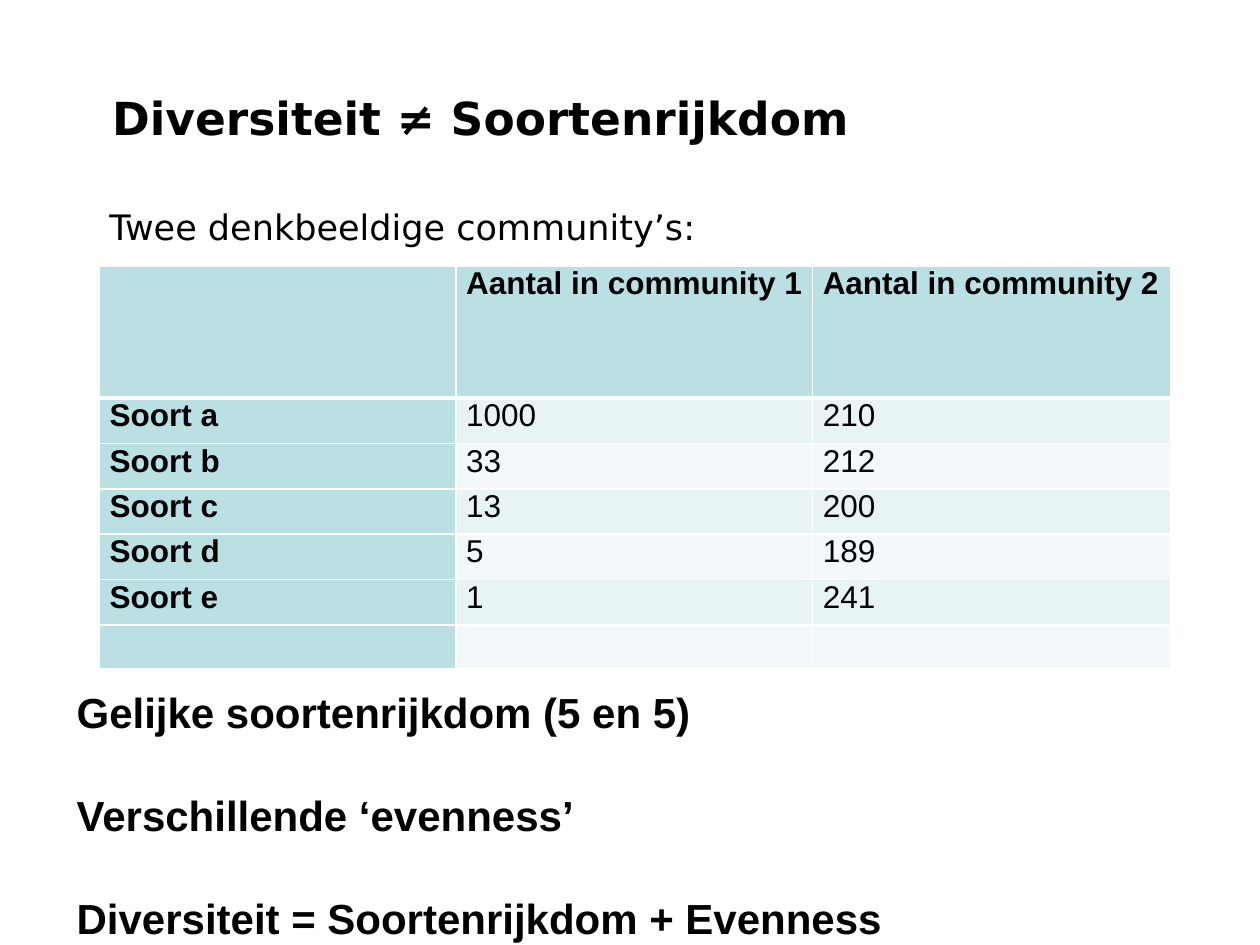
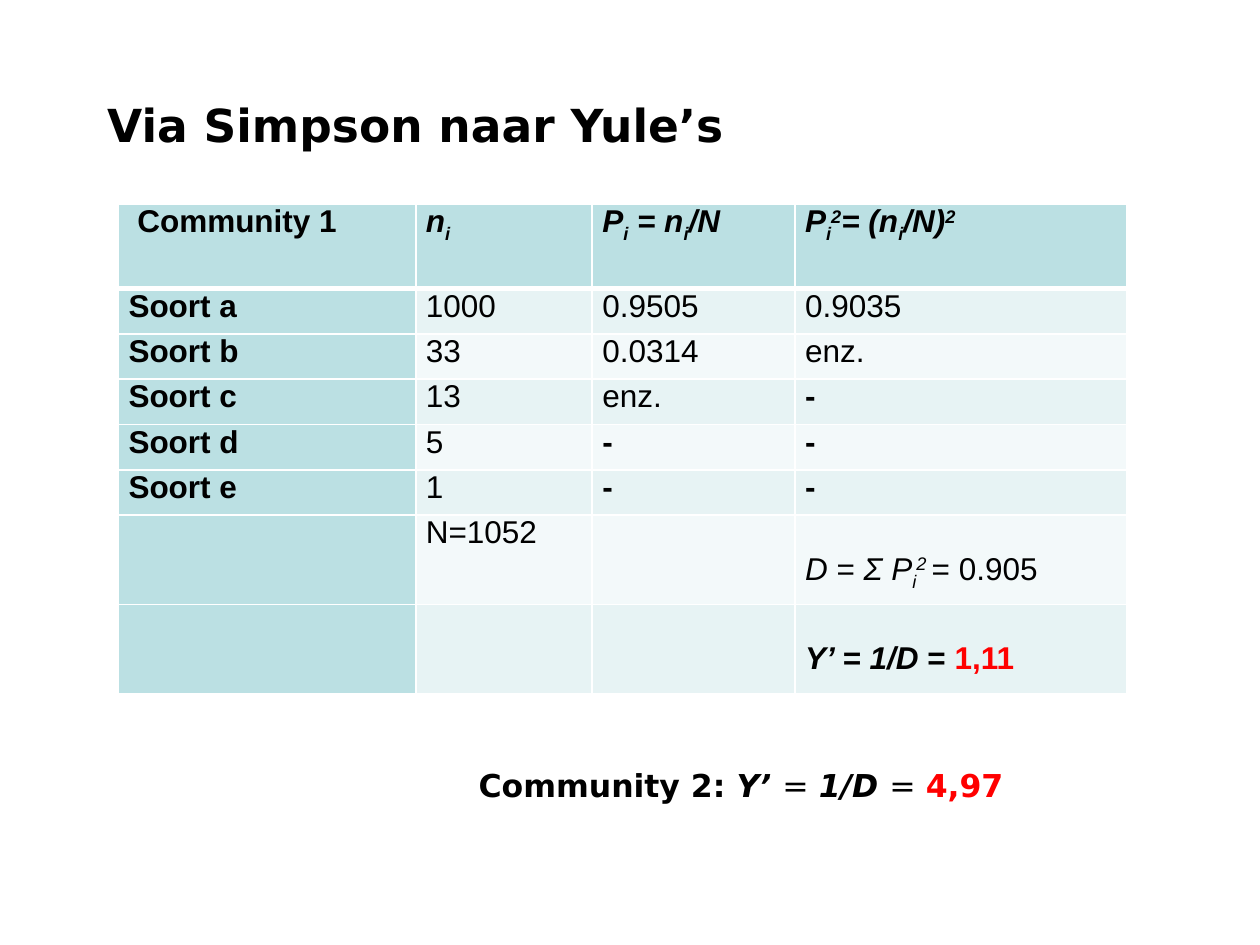
from pptx import Presentation
from pptx.dml.color import RGBColor
from pptx.enum.text import MSO_ANCHOR, MSO_AUTO_SIZE, PP_ALIGN
from pptx.oxml.ns import qn
from pptx.util import Inches, Pt
from lxml import etree

LEFT, MIDDLE, FIXED = PP_ALIGN.LEFT, MSO_ANCHOR.MIDDLE, MSO_AUTO_SIZE.NONE
SANS, ARIAL = "DejaVu Sans", "Arial"
BLACK, WHITE, RED = "000000", "FFFFFF", "FF0000"
HEAD, BANDS = "BBE0E3", ("E7F3F4", "F3F9FA")
SHIFT = {"sub": "-25000", "sup": "30000"}
INSET, DROP = 0.08, 0.29

SPECIES = ["Soort a", "Soort b", "Soort c", "Soort d", "Soort e"]
FIRST = ["1000", "33", "13", "5", "1"]
SECOND = ["210", "212", "200", "189", "241"]
DASH = [("-", "b")]
SHARE = ["0.9505", "0.0314", "enz.", DASH, DASH]
SQUARE = ["0.9035", "enz.", DASH, DASH, DASH]
N = [("n", "b i"), ("i", "b i sub")]
P = [("P", "b i"), ("i", "b i sub")]
POWER = [("2", "b i sup")]
SIMPSON = [("D ", "i"), ("= ", ""), ("Σ P", "i"), ("i", "i sub"),
           ("2 ", "i sup"), ("= 0.905", "")]
YULE = [("Y’ = 1/D ", "b i"), ("= ", "b"), ("1,11", "b red")]
RESULT = [("Community 2: ", "b"), ("Y’ ", "b i"), ("= ", ""),
          ("1/D ", "b i"), ("= ", ""), ("4,97", "b red")]

COUNTS = {
    "at": (0.79, 2.11),
    "cols": [2.83, 2.83, 2.84],
    "rows": [1.05] + [0.36] * 5 + [0.35],
    "cells": [["", "Aantal in community 1", "Aantal in community 2"],
              *zip(SPECIES, FIRST, SECOND),
              ["", "", ""]],
    "inset": {},
}
INDEX = {
    "at": (0.94, 1.62),
    "cols": [2.36, 1.4, 1.61, 2.63],
    "rows": [0.67] + [0.36] * 5 + [0.71] * 2,
    "cells": [["Community 1", N,
               P + [(" = ", "b i")] + N + [("/N", "b i")],
               P + POWER + [("= (", "b i")] + N + [("/N)", "b i")] + POWER],
              *zip(SPECIES, FIRST, SHARE, SQUARE),
              ["", "N=1052", "", SIMPSON],
              ["", "", "", YULE]],
    "inset": {(0, 0): (0.15, 0), (6, 3): (INSET, DROP), (7, 3): (INSET, DROP)},
}
POINTS = ["Gelijke soortenrijkdom (5 en 5)",
          "Verschillende ‘evenness’",
          "Diversiteit = Soortenrijkdom + Evenness"]


def tint(code):
    return RGBColor.from_string(code)


def write(par, text, size=18, font=ARIAL, bold=False, gap=0):
    par.alignment = LEFT
    par.space_before = Pt(gap)
    runs = [(text, "b" if bold else "")] if isinstance(text, str) else text
    for words, style in runs:
        marks = style.split()
        run = par.add_run()
        run.text = words
        run.font.size, run.font.name = Pt(size), font
        run.font.bold, run.font.italic = "b" in marks, "i" in marks
        run.font.color.rgb = tint(RED if "red" in marks else BLACK)
        for mark in marks:
            if mark in SHIFT:
                run._r.get_or_add_rPr().set("baseline", SHIFT[mark])


def page(deck, title, left, top):
    slide = deck.slides.add_slide(deck.slide_layouts[5])
    head = slide.shapes.title
    head.left, head.top = Inches(left), Inches(top)
    head.width, head.height = Inches(8.51), Inches(1.25)
    frame = head.text_frame
    frame.auto_size, frame.vertical_anchor = FIXED, MIDDLE
    write(frame.paragraphs[0], title, size=26, font=SANS, bold=True)
    return slide


def box(slide, place, lines, gap=0, **form):
    frame = slide.shapes.add_textbox(*map(Inches, place)).text_frame
    frame.word_wrap = True
    for i, line in enumerate(lines):
        par = frame.add_paragraph() if i else frame.paragraphs[0]
        write(par, line, gap=gap if i else 0, **form)


def edge(cell, row):
    props = cell._tc.get_or_add_tcPr()
    wide = {"lnT": row == 1, "lnB": row == 0}
    for side in ("lnL", "lnR", "lnT", "lnB"):
        line = etree.SubElement(props, qn("a:" + side))
        line.set("w", str(Pt(3 if wide.get(side) else 1)))
        fill = etree.SubElement(line, qn("a:solidFill"))
        etree.SubElement(fill, qn("a:srgbClr")).set("val", WHITE)


def grid(slide, data):
    cols, rows = data["cols"], data["rows"]
    place = (*data["at"], sum(cols), sum(rows))
    table = slide.shapes.add_table(len(rows), len(cols), *map(Inches, place)).table
    for col, width in zip(table.columns, cols):
        col.width = Inches(width)
    for r, (high, texts) in enumerate(zip(rows, data["cells"])):
        table.rows[r].height = Inches(high)
        for c, text in enumerate(texts):
            cell = table.cell(r, c)
            left, top = data["inset"].get((r, c), (INSET, 0))
            cell.margin_left, cell.margin_top = Inches(left), Inches(top)
            cell.margin_right, cell.margin_bottom = Inches(0.05), 0
            edge(cell, r)
            label = r == 0 or c == 0
            cell.fill.solid()
            cell.fill.fore_color.rgb = tint(HEAD if label else BANDS[(r - 1) % 2])
            if text:
                write(cell.text_frame.paragraphs[0], text, bold=label)


def main():
    deck = Presentation()
    deck.slide_width, deck.slide_height = Inches(10), Inches(7.5)

    slide = page(deck, "Diversiteit ≠ Soortenrijkdom", 0.79, 0.31)
    box(slide, (0.77, 1.58, 8.51, 0.5), ["Twee denkbeeldige community’s:"],
        size=20, font=SANS)
    grid(slide, COUNTS)
    box(slide, (0.51, 5.4, 6.85, 2.1), POINTS, size=24, bold=True, gap=30)

    slide = page(deck, "Via Simpson naar Yule’s", 0.75, 0.36)
    grid(slide, INDEX)
    box(slide, (3.7, 6.03, 4.6, 0.4), [RESULT], font=SANS)

    deck.save("out.pptx")


if __name__ == "__main__":
    main()
